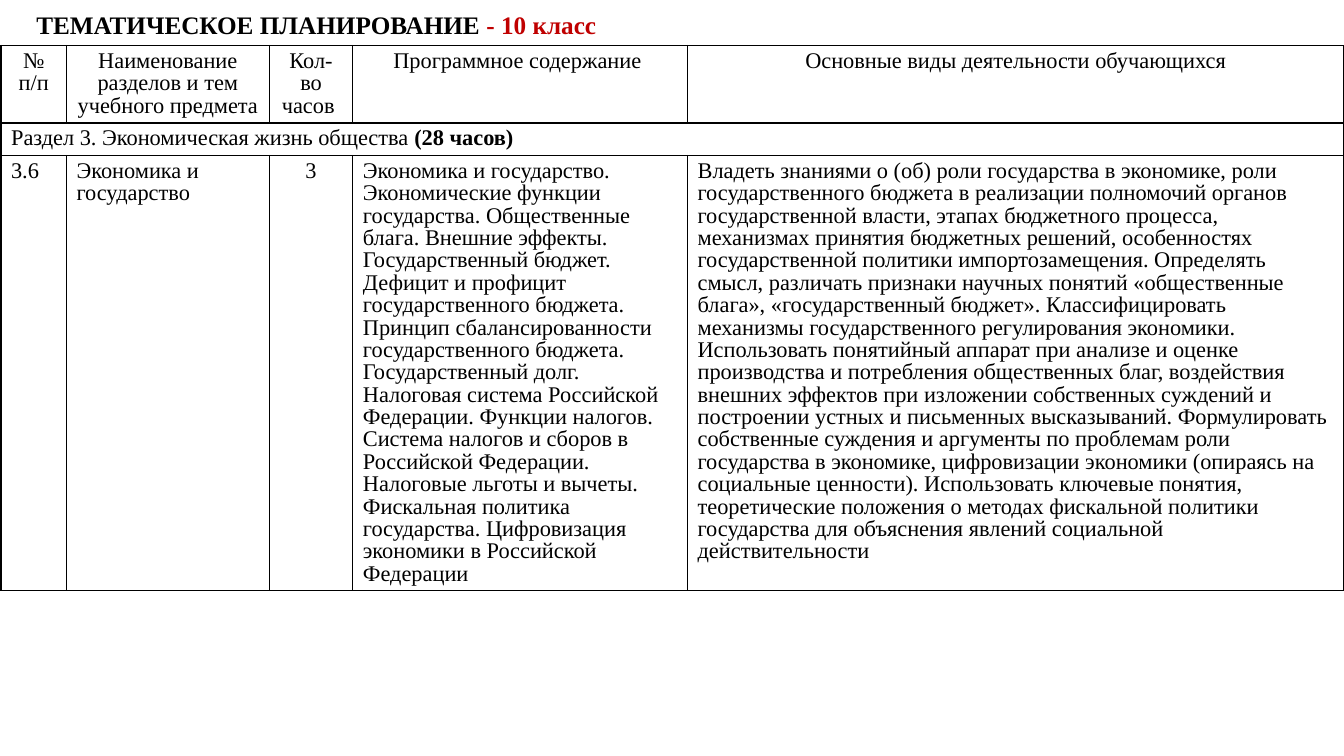
from pptx import Presentation
from pptx.dml.color import RGBColor
from pptx.enum.text import MSO_ANCHOR, PP_ALIGN
from pptx.oxml import parse_xml
from pptx.oxml.ns import nsdecls
from pptx.util import Inches, Pt

FONT = "Times New Roman"
COLORS = {"ink": "000000", "red": "C00000", "paper": "FFFFFF"}
WIDTHS = [0.65, 2.01, 0.83, 3.32, 6.51]
HEIGHTS = [0.77, 0.32, 4.32]
CENTER, LEFT = PP_ALIGN.CENTER, PP_ALIGN.LEFT

HEADS = [
    "№ п/п",
    "Наименование разделов и тем учебного предмета ",
    "Кол-во часов ",
    "Программное содержание ",
    "Основные виды деятельности обучающихся",
]
CONTENT = (
    "Экономика и государство. Экономические функции государства. "
    "Общественные блага. Внешние эффекты. Государственный бюджет. "
    "Дефицит и профицит государственного бюджета. Принцип "
    "сбалансированности государственного бюджета. Государственный долг. "
    "Налоговая система Российской Федерации. Функции налогов. Система "
    "налогов и сборов в Российской Федерации. Налоговые льготы и вычеты. "
    "Фискальная политика государства. Цифровизация экономики в "
    "Российской Федерации"
)
SKILLS = [
    "Владеть знаниями о (об) роли государства в экономике, роли "
    "государственного бюджета в реализации полномочий органов "
    "государственной власти, этапах бюджетного процесса, механизмах "
    "принятия бюджетных решений, особенностях государственной политики "
    "импортозамещения.",
    "Определять смысл, различать признаки научных понятий "
    "«общественные блага», «государственный бюджет».",
    "Классифицировать механизмы государственного регулирования экономики.",
    "Использовать понятийный аппарат при анализе и оценке производства и "
    "потребления общественных благ, воздействия внешних эффектов при "
    "изложении собственных суждений и построении устных и письменных "
    "высказываний.",
    "Формулировать собственные суждения и аргументы по проблемам роли "
    "государства в экономике, цифровизации экономики (опираясь на "
    "социальные ценности).",
    "Использовать ключевые понятия, теоретические положения о методах "
    "фискальной политики государства для объяснения явлений социальной "
    "действительности",
]
TOPIC = ["3.6", "Экономика и государство", "3", CONTENT, " ".join(SKILLS)]


def color(name):
    return RGBColor.from_string(COLORS[name])


def write(frame, text, size=16, bold=False, ink="ink", align=LEFT, line=0.9):
    para = frame.paragraphs[0]
    para.alignment = align
    para.line_spacing = line
    run = para.add_run()
    run.text = text
    run.font.name = FONT
    run.font.size = Pt(size)
    run.font.bold = bold
    run.font.color.rgb = color(ink)


def add_title(slide):
    title = slide.shapes.title
    title.left, title.top = Inches(0.26), Inches(0.04)
    title.width, title.height = Inches(6.66), Inches(0.4)
    frame = title.text_frame
    frame.word_wrap = True
    frame.vertical_anchor = MSO_ANCHOR.TOP
    look = {"size": 18, "bold": True, "line": 1.0}
    write(frame, "ТЕМАТИЧЕСКОЕ ПЛАНИРОВАНИЕ ", **look)
    write(frame, "- 10 класс", ink="red", **look)


def style_cell(cell):
    cell.fill.solid()
    cell.fill.fore_color.rgb = color("paper")
    props = cell._tc.get_or_add_tcPr()
    for place, side in enumerate("LRTB"):
        props.insert(place, parse_xml(
            f'<a:ln{side} {nsdecls("a")} w="{Pt(1)}"><a:solidFill>'
            f'<a:srgbClr val="{COLORS["ink"]}"/></a:solidFill></a:ln{side}>'
        ))


def add_plan(slide):
    table = slide.shapes.add_table(
        len(HEIGHTS), len(WIDTHS), Inches(0.01), Inches(0.45),
        Inches(sum(WIDTHS)), Inches(sum(HEIGHTS)),
    ).table
    table.first_row = False
    table.horz_banding = False
    for column, width in zip(table.columns, WIDTHS):
        column.width = Inches(width)
    for row, height in zip(table.rows, HEIGHTS):
        row.height = Inches(height)
        for cell in row.cells:
            style_cell(cell)
    for col, (head, topic) in enumerate(zip(HEADS, TOPIC)):
        write(table.cell(0, col).text_frame, head, align=CENTER)
        write(table.cell(2, col).text_frame, topic,
              align=CENTER if col == 2 else LEFT)
    part = table.cell(1, 0)
    part.merge(table.cell(1, len(WIDTHS) - 1))
    write(part.text_frame, "Раздел 3. Экономическая жизнь общества ")
    write(part.text_frame, "(28 часов)", bold=True)


def main():
    deck = Presentation()
    deck.slide_width, deck.slide_height = Inches(13.33), Inches(7.5)
    slide = deck.slides.add_slide(deck.slide_layouts[5])
    add_plan(slide)
    add_title(slide)
    deck.save("out.pptx")


if __name__ == "__main__":
    main()
